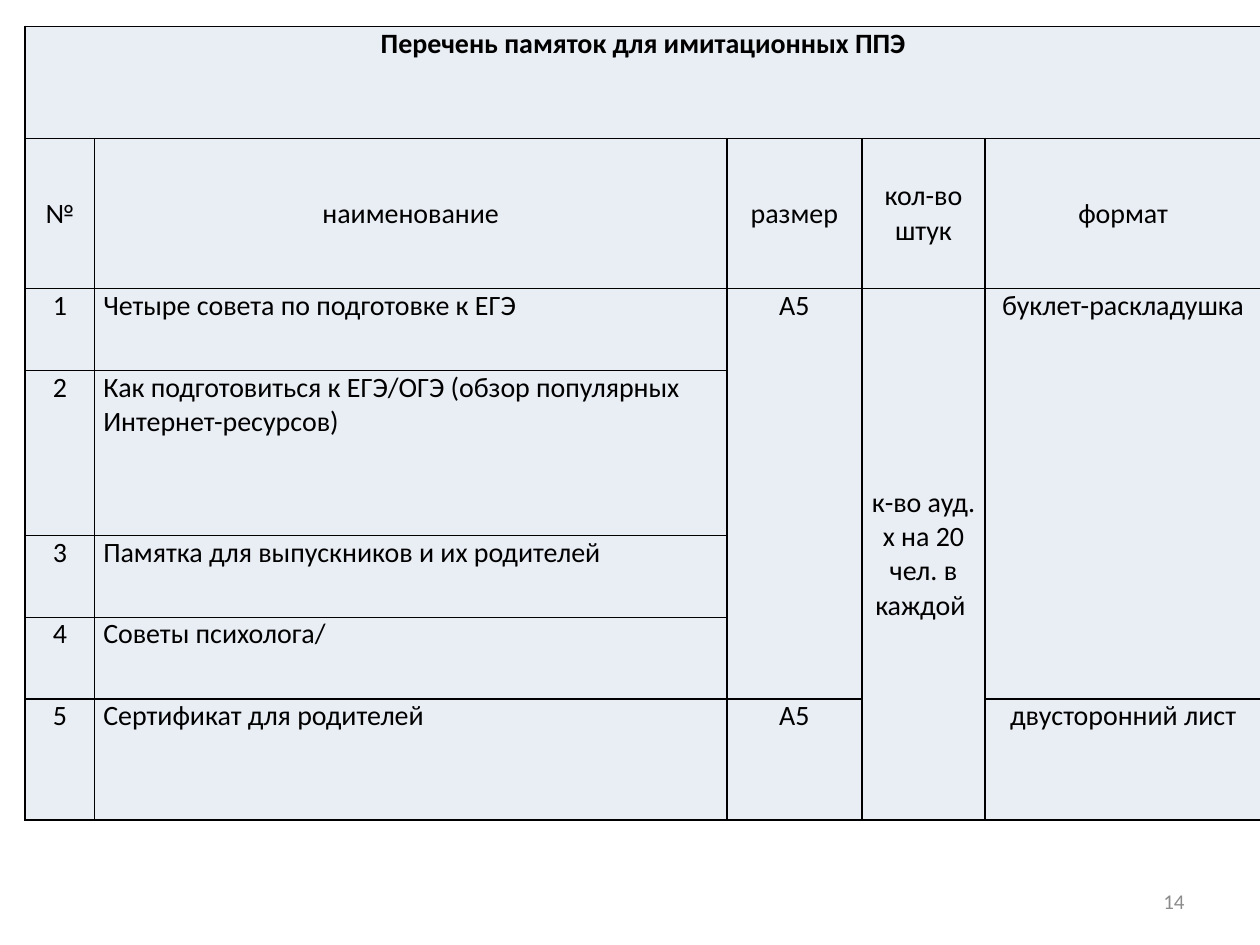
from dataclasses import dataclass

from lxml.etree import SubElement
from pptx import Presentation
from pptx.dml.color import RGBColor
from pptx.enum.text import MSO_ANCHOR, PP_ALIGN
from pptx.oxml.ns import qn
from pptx.util import Inches, Pt


@dataclass(frozen=True)
class Theme:
    font: str = "Calibri"
    ink: str = "000000"
    muted: str = "8C8C8C"
    cell: str = "E9EDF4"
    body_size: int = 16
    number_size: int = 12
    border: int = 1


theme = Theme()


def write(frame, text, align, size, color, bold=False):
    para = frame.paragraphs[0]
    para.alignment = align
    span = para.add_run()
    span.text = text
    span.font.color.rgb = RGBColor.from_string(color)
    for name, value in {"name": theme.font, "size": Pt(size), "bold": bold}.items():
        setattr(span.font, name, value)


def draw_borders(cell):
    properties = cell._tc.get_or_add_tcPr()
    for side in ("lnL", "lnR", "lnT", "lnB"):
        line = SubElement(properties, qn(f"a:{side}"), w=str(Pt(theme.border)))
        fill = SubElement(line, qn("a:solidFill"))
        SubElement(fill, qn("a:srgbClr"), val=theme.ink)


deck = Presentation()
deck.slide_width, deck.slide_height = Inches(10), Inches(7.5)
page = deck.slides.add_slide(deck.slide_layouts[6])

# Page number
box = page.shapes.add_textbox(Inches(7.17), Inches(6.95), Inches(2.33), Inches(0.4))
box.text_frame.word_wrap = True
box.text_frame.vertical_anchor = MSO_ANCHOR.MIDDLE
write(box.text_frame, "14", PP_ALIGN.RIGHT, theme.number_size, theme.muted)

# Table content: None marks a cell covered by a merged one
rows = [
    ["Перечень памяток для имитационных ППЭ", None, None, None, None],
    ["№", "наименование", "размер", "кол-во штук", "формат"],
    ["1", "Четыре совета по подготовке к ЕГЭ", "А5",
     "к-во ауд. х на 20 чел. в каждой ", "буклет-раскладушка"],
    ["2", "Как подготовиться к ЕГЭ/ОГЭ (обзор популярных Интернет-ресурсов)",
     None, None, None],
    ["3", "Памятка для выпускников и их родителей", None, None, None],
    ["4", "Советы психолога/", None, None, None],
    ["5", "Сертификат для родителей", "А5", None, "двусторонний лист"],
]
column_widths = [0.55, 5.02, 1.07, 0.98, 2.19]
row_heights = [0.89, 1.19, 0.65, 1.31, 0.65, 0.65, 0.96]
merges = [((0, 0), (0, 4)), ((2, 2), (5, 2)), ((2, 3), (6, 3)), ((2, 4), (5, 4))]
header_row, name_column, count_column = 1, 1, 3

# Table grid
table = page.shapes.add_table(
    len(rows), len(column_widths),
    Inches(0.2), Inches(0.21), Inches(sum(column_widths)), Inches(sum(row_heights)),
).table
for column, width in zip(table.columns, column_widths):
    column.width = Inches(width)
for row, height in zip(table.rows, row_heights):
    row.height = Inches(height)
for first, last in merges:
    table.cell(*first).merge(table.cell(*last))

# Cells
cell_format = {
    "margin_left": Inches(0.07),
    "margin_right": Inches(0.07),
    "margin_top": 0,
    "margin_bottom": 0,
}
for row_index, texts in enumerate(rows):
    for column_index, text in enumerate(texts):
        cell = table.cell(row_index, column_index)
        for name, value in cell_format.items():
            setattr(cell, name, value)
        draw_borders(cell)
        cell.fill.solid()
        cell.fill.fore_color.rgb = RGBColor.from_string(theme.cell)
        if text is None:
            continue
        if row_index == header_row or (row_index and column_index == count_column):
            cell.vertical_anchor = MSO_ANCHOR.MIDDLE
        is_name = row_index > header_row and column_index == name_column
        align = PP_ALIGN.LEFT if is_name else PP_ALIGN.CENTER
        write(cell.text_frame, text, align, theme.body_size, theme.ink,
              bold=row_index == 0)

deck.save("out.pptx")
